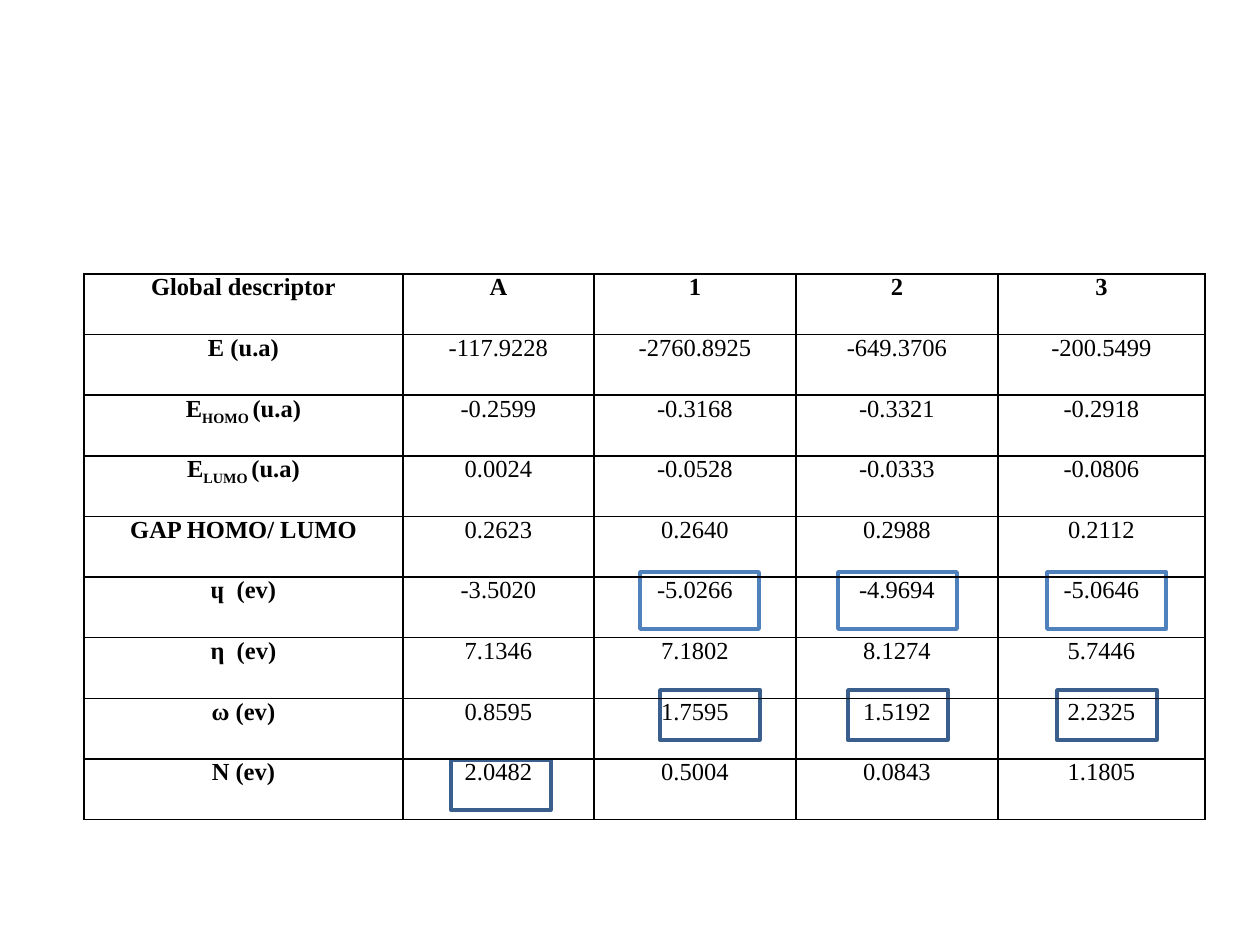
from dataclasses import dataclass

from lxml import etree
from pptx import Presentation
from pptx import util as u
from pptx.dml.color import RGBColor
from pptx.enum import shapes, text
from pptx.oxml.ns import qn

EMU_PER_PX = 914400 / 126


def px(length):
    return u.Emu(round(length * EMU_PER_PX))


@dataclass(frozen=True)
class Theme:
    font: str = "Times New Roman"
    size: int = 14
    ink: str = "000000"
    paper: str = "FFFFFF"
    softness_mark: str = "4F81BD"
    philicity_mark: str = "3A5F8C"
    mark_width: int = 2
    border_width: int = 1
    subscript: str = "-25000"


class SlideBuilder:
    def __init__(self, slide, theme):
        self.slide = slide
        self.theme = theme

    def mark(self, left, top, width, height, color):
        """Outlined rectangle that highlights a value."""
        box = self.slide.shapes.add_shape(
            shapes.MSO_SHAPE.RECTANGLE, px(left), px(top), px(width), px(height))
        box.shadow.inherit = False
        box.fill.solid()
        box.fill.fore_color.rgb = RGBColor.from_string(self.theme.paper)
        box.line.color.rgb = RGBColor.from_string(color)
        box.line.width = u.Pt(self.theme.mark_width)

    def run(self, paragraph, words, bold, subscript=False):
        run = paragraph.add_run()
        run.text = words
        run.font.name = self.theme.font
        run.font.size = u.Pt(self.theme.size)
        run.font.bold = bold
        run.font.color.rgb = RGBColor.from_string(self.theme.ink)
        if subscript:
            run.font._element.set("baseline", self.theme.subscript)

    def borders(self, cell):
        properties = cell._tc.get_or_add_tcPr()
        for side in ("lnL", "lnR", "lnT", "lnB"):
            line = etree.SubElement(properties, qn(f"a:{side}"),
                                    w=str(u.Pt(self.theme.border_width)))
            fill = etree.SubElement(line, qn("a:solidFill"))
            etree.SubElement(fill, qn("a:srgbClr"), val=self.theme.ink)

    def cell(self, cell, parts, bold):
        """Fill a cell; every second part is a subscript."""
        cell.margin_left = cell.margin_right = px(9)
        cell.margin_top = cell.margin_bottom = 0
        cell.vertical_anchor = text.MSO_ANCHOR.TOP
        self.borders(cell)
        cell.fill.background()
        paragraph = cell.text_frame.paragraphs[0]
        paragraph.alignment = text.PP_ALIGN.CENTER
        for index, words in enumerate(parts):
            self.run(paragraph, words, bold, subscript=index % 2 == 1)

    def table(self, left, top, widths, height, rows):
        table = self.slide.shapes.add_table(
            len(rows), len(widths), px(left), px(top), px(sum(widths)), px(height)).table
        table.first_row = table.horz_banding = False
        for column, width in zip(table.columns, widths):
            column.width = px(width)
        for r, (label, *values) in enumerate(rows):
            table.rows[r].height = px(height / len(rows))
            self.cell(table.cell(r, 0), label, bold=True)
            for c, value in enumerate(values, start=1):
                self.cell(table.cell(r, c), [value], bold=r == 0)


DESCRIPTORS = [
    (["Global descriptor"], "A", "1", "2", "3"),
    (["E (u.a)"], "-117.9228", "-2760.8925", "-649.3706", "-200.5499"),
    (["E", "HOMO ", "(u.a)"], "-0.2599", "-0.3168", "-0.3321", "-0.2918"),
    (["E", "LUMO ", "(u.a)"], "0.0024", "-0.0528", "-0.0333", "-0.0806"),
    (["GAP HOMO/ LUMO"], "0.2623", "0.2640", "0.2988", "0.2112"),
    (["ɥ  (ev)"], "-3.5020", "-5.0266", "-4.9694", "-5.0646"),
    (["η  (ev)"], "7.1346", "7.1802", "8.1274", "5.7446"),
    (["ω (ev)"], "0.8595", "1.7595", "1.5192", "2.2325"),
    (["N (ev)"], "2.0482", "0.5004", "0.0843", "1.1805"),
]


def main():
    deck = Presentation()
    deck.slide_width, deck.slide_height = px(1260), px(945)
    blank_layout = deck.slide_layouts[6]
    theme = Theme()
    builder = SlideBuilder(deck.slides.add_slide(blank_layout), theme)

    # Marks behind the values of the N and ω rows
    for left, top in ((451, 760), (1057, 690), (848, 690), (660, 690)):
        builder.mark(left, top, 100, 50, theme.philicity_mark)

    # Marks behind the values of the ɥ row
    for left in (1047, 838, 640):
        builder.mark(left, 572, 119, 57, theme.softness_mark)

    # Descriptor table
    builder.table(84, 274, (319, 191, 202, 202, 207), 546, DESCRIPTORS)

    deck.save("out.pptx")


if __name__ == "__main__":
    main()
